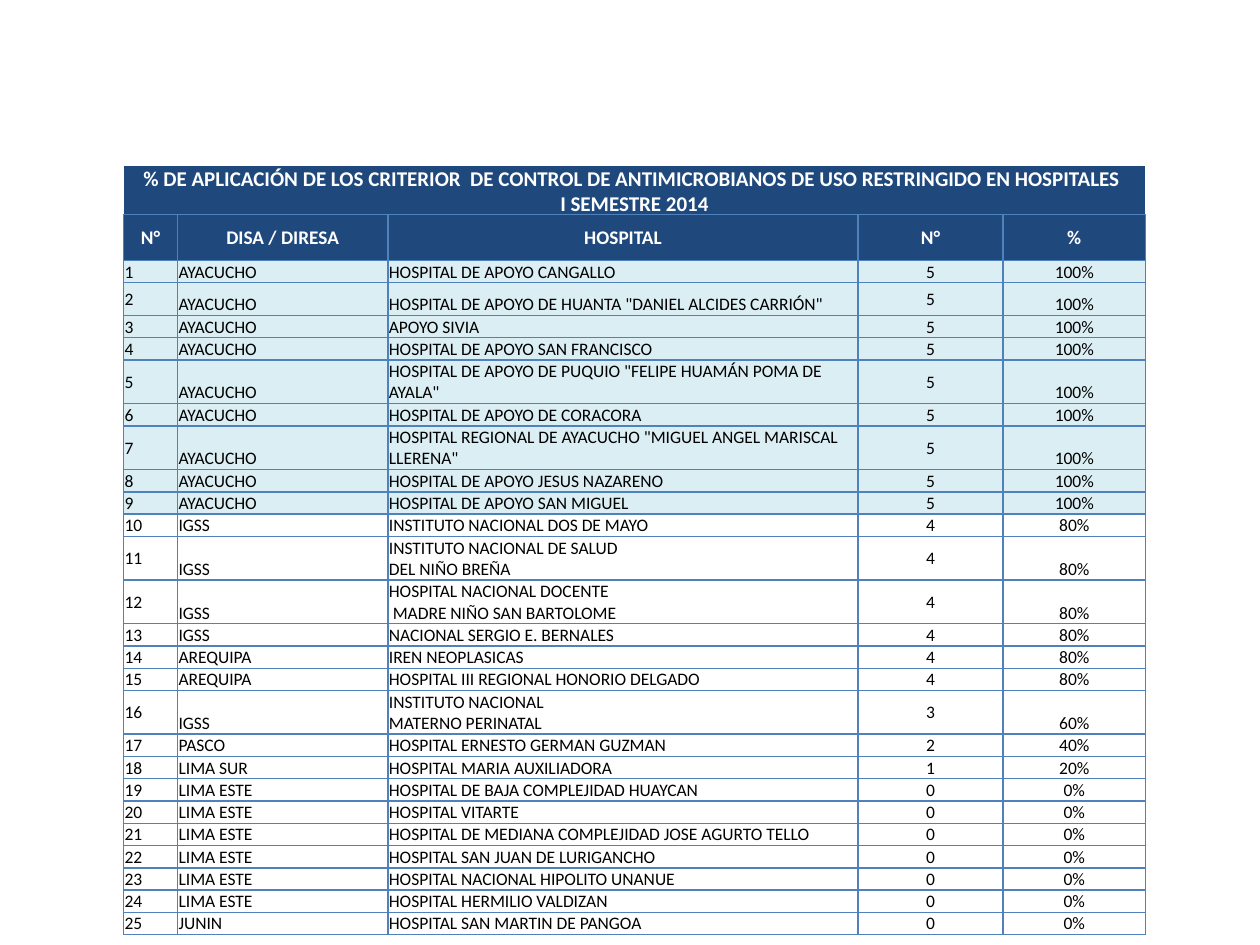
import copy

import lxml.etree
import pptx
import pptx.dml.color
import pptx.enum.text
import pptx.oxml.ns
import pptx.util

Cm = pptx.util.Cm
RGBColor = pptx.dml.color.RGBColor
ALIGN = pptx.enum.text.PP_ALIGN
ANCHOR = pptx.enum.text.MSO_ANCHOR
qn = pptx.oxml.ns.qn

NAVY = RGBColor(0x1F, 0x49, 0x7D)
BLUE = RGBColor(0x4F, 0x81, 0xBD)
PALE_BLUE = RGBColor(0xDB, 0xEE, 0xF4)
WHITE = RGBColor(0xFF, 0xFF, 0xFF)
BLACK = RGBColor(0x00, 0x00, 0x00)

TITLE = (
    "% DE APLICACIÓN DE LOS CRITERIOR  DE CONTROL DE ANTIMICROBIANOS"
    " DE USO RESTRINGIDO EN HOSPITALES \nI SEMESTRE 2014"
)
HEADERS = ["N°", "DISA / DIRESA", "HOSPITAL", "N°", "%"]
HOSPITALS = [
    ("AYACUCHO", "HOSPITAL DE APOYO CANGALLO", 5),
    ("AYACUCHO", 'HOSPITAL DE APOYO DE HUANTA "DANIEL ALCIDES CARRIÓN"', 5),
    ("AYACUCHO", "APOYO SIVIA", 5),
    ("AYACUCHO", "HOSPITAL DE APOYO SAN FRANCISCO", 5),
    ("AYACUCHO", 'HOSPITAL DE APOYO DE PUQUIO "FELIPE HUAMÁN POMA DE AYALA"', 5),
    ("AYACUCHO", "HOSPITAL DE APOYO DE CORACORA", 5),
    ("AYACUCHO", 'HOSPITAL REGIONAL DE AYACUCHO "MIGUEL ANGEL MARISCAL LLERENA"', 5),
    ("AYACUCHO", "HOSPITAL DE APOYO JESUS NAZARENO", 5),
    ("AYACUCHO", "HOSPITAL DE APOYO SAN MIGUEL", 5),
    ("IGSS", "INSTITUTO NACIONAL DOS DE MAYO", 4),
    ("IGSS", "INSTITUTO NACIONAL DE SALUD \nDEL NIÑO BREÑA", 4),
    ("IGSS", "HOSPITAL NACIONAL DOCENTE\n MADRE NIÑO SAN BARTOLOME", 4),
    ("IGSS", "NACIONAL SERGIO E. BERNALES", 4),
    ("AREQUIPA", "IREN NEOPLASICAS", 4),
    ("AREQUIPA", "HOSPITAL III REGIONAL HONORIO DELGADO", 4),
    ("IGSS", "INSTITUTO NACIONAL \nMATERNO PERINATAL", 3),
    ("PASCO", "HOSPITAL ERNESTO GERMAN GUZMAN", 2),
    ("LIMA SUR", "HOSPITAL MARIA AUXILIADORA", 1),
    ("LIMA ESTE", "HOSPITAL DE BAJA COMPLEJIDAD HUAYCAN", 0),
    ("LIMA ESTE", "HOSPITAL VITARTE", 0),
    ("LIMA ESTE", "HOSPITAL DE MEDIANA COMPLEJIDAD JOSE AGURTO TELLO", 0),
    ("LIMA ESTE", "HOSPITAL SAN JUAN DE LURIGANCHO", 0),
    ("LIMA ESTE", "HOSPITAL NACIONAL HIPOLITO UNANUE", 0),
    ("LIMA ESTE", "HOSPITAL HERMILIO VALDIZAN", 0),
    ("JUNIN", "HOSPITAL SAN MARTIN DE PANGOA", 0),
]
CRITERIA = 5
COLUMN_WIDTHS = [1.09, 4.24, 9.48, 2.92, 2.87]
COLUMN_ALIGNMENTS = [ALIGN.LEFT, ALIGN.LEFT, ALIGN.LEFT, ALIGN.CENTER, ALIGN.CENTER]
COLUMN_ANCHORS = [ANCHOR.MIDDLE, ANCHOR.BOTTOM, ANCHOR.BOTTOM, ANCHOR.MIDDLE, ANCHOR.BOTTOM]
TABLE_LEFT = 2.49
HEADER_HEIGHT = 0.93
LINE_HEIGHT = 0.44
ROW_LINES = {2: 1.5, 5: 2, 7: 2, 11: 2, 12: 2, 16: 2}


def write_text(text_frame, text, *, size, color, font="Calibri", bold=False, alignment=ALIGN.LEFT):
    paragraph = text_frame.paragraphs[0]
    paragraph.text = text
    paragraph.alignment = alignment
    for run in paragraph.runs:
        run.font.name = font
        run.font.size = pptx.util.Pt(size)
        run.font.bold = bold
        run.font.color.rgb = color
    for line_break in paragraph._p.findall(qn("a:br")):
        line_break.append(copy.deepcopy(paragraph.runs[0]._r.find(qn("a:rPr"))))


class SlideBuilder:
    margin = Cm(0.02)
    border_width = pptx.util.Pt(1)

    def __init__(self, slide):
        self.slide = slide

    def table(self, left, top, widths, heights):
        frame = self.slide.shapes.add_table(
            len(heights), len(widths), Cm(left), Cm(top), Cm(sum(widths)), Cm(sum(heights))
        )
        table = frame.table
        table.first_row = False
        table.horz_banding = False
        for column, width in zip(table.columns, widths):
            column.width = Cm(width)
        for row, height in zip(table.rows, heights):
            row.height = Cm(height)
        return table

    def cell(self, cell, text, *, fill, border, anchor=ANCHOR.MIDDLE, **text_format):
        cell.margin_left = cell.margin_right = cell.margin_top = self.margin
        cell.margin_bottom = 0
        cell.vertical_anchor = anchor
        write_text(cell.text_frame, text, **text_format)
        self.borders(cell, border)
        cell.fill.solid()
        cell.fill.fore_color.rgb = fill

    def borders(self, cell, color):
        properties = cell._tc.get_or_add_tcPr()
        for side in ("a:lnL", "a:lnR", "a:lnT", "a:lnB"):
            line = lxml.etree.SubElement(properties, qn(side), w=str(self.border_width))
            fill = lxml.etree.SubElement(line, qn("a:solidFill"))
            lxml.etree.SubElement(fill, qn("a:srgbClr"), val=str(color))


def main():
    presentation = pptx.Presentation()
    presentation.slide_width = Cm(25.4)
    presentation.slide_height = Cm(19.05)
    builder = SlideBuilder(presentation.slides.add_slide(presentation.slide_layouts[6]))
    heading = {"fill": NAVY, "color": WHITE, "bold": True, "alignment": ALIGN.CENTER}

    title_table = builder.table(TABLE_LEFT, 3.33, [sum(COLUMN_WIDTHS)], [1.04])
    builder.cell(title_table.cell(0, 0), TITLE, border=WHITE, size=12, **heading)

    row_heights = [LINE_HEIGHT * ROW_LINES.get(number, 1) for number in range(1, len(HOSPITALS) + 1)]
    hospital_table = builder.table(TABLE_LEFT, 4.32, COLUMN_WIDTHS, [HEADER_HEIGHT] + row_heights)
    for column, header in enumerate(HEADERS):
        builder.cell(hospital_table.cell(0, column), header, border=BLUE, size=11, **heading)
    for number, (region, hospital, count) in enumerate(HOSPITALS, start=1):
        values = [number, region, hospital, count, f"{count * 100 // CRITERIA}%"]
        for column, value in enumerate(values):
            builder.cell(
                hospital_table.cell(number, column),
                str(value),
                fill=PALE_BLUE if count == CRITERIA else WHITE,
                border=BLUE,
                anchor=COLUMN_ANCHORS[column],
                alignment=COLUMN_ALIGNMENTS[column],
                size=10,
                color=BLACK,
            )

    presentation.save("out.pptx")


if __name__ == "__main__":
    main()
